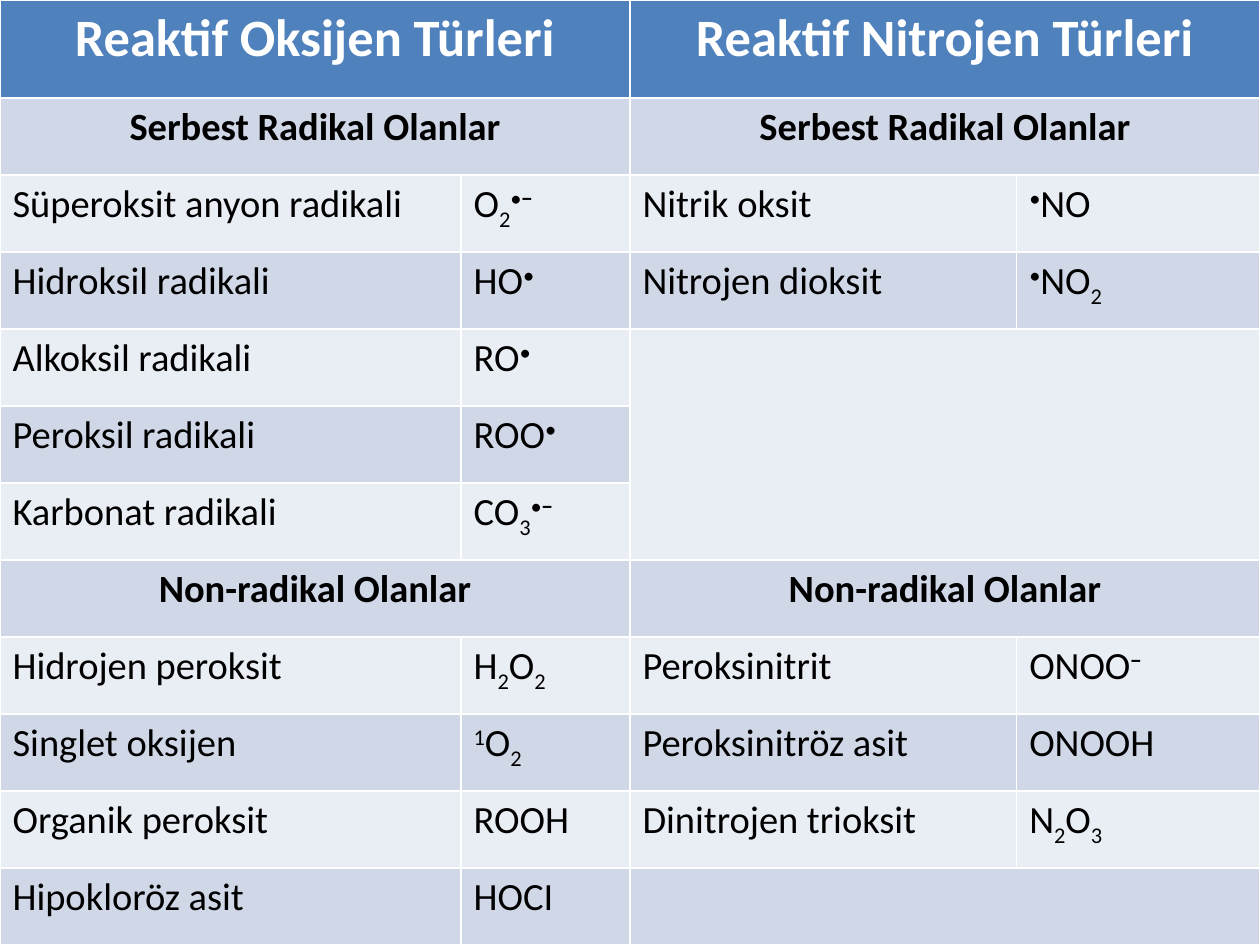
from pptx import Presentation
from pptx import util as u
from pptx.dml import color
from pptx.enum import text

FONT = "Calibri"
COLUMN_WIDTHS = [263.5, 96.5, 221, 139]
HEADER_HEIGHT, ROW_HEIGHT = 56, 44
HEADER_FILL, BANDS = "4F81BD", ("E9EDF4", "D0D8E8")
SHIFTS = {"_": -25000, "^": 30000}

TITLES = ("Reaktif Oksijen Türleri", "Reaktif Nitrojen Türleri")
SECTIONS = [
    ("Serbest Radikal Olanlar",
     [("Süperoksit anyon radikali", ["O", "_2", "^•", "^−"]),
      ("Hidroksil radikali", ["HO", "^•"]),
      ("Alkoksil radikali", ["RO", "^•"]),
      ("Peroksil radikali", ["ROO", "^•"]),
      ("Karbonat radikali", ["CO", "_3", "^•", "^−"])],
     [("Nitrik oksit", ["^•", "NO"]),
      ("Nitrojen dioksit", ["^•", "NO", "_2"])]),
    ("Non-radikal Olanlar",
     [("Hidrojen peroksit", ["H", "_2", "O", "_2"]),
      ("Singlet oksijen", ["^1", "O", "_2"]),
      ("Organik peroksit", ["ROOH"]),
      ("Hipokloröz asit", ["HOCI"])],
     [("Peroksinitrit", ["ONOO", "^−"]),
      ("Peroksinitröz asit", ["ONOOH"]),
      ("Dinitrojen trioksit", ["N", "_2", "O", "_3"])]),
]


def rgb(hex_color):
    return color.RGBColor.from_string(hex_color)


def write(cell, parts, size=22, ink="000000", bold=False, centred=False):
    paragraph = cell.text_frame.paragraphs[0]
    if centred:
        paragraph.alignment = text.PP_ALIGN.CENTER
    for part in parts:
        shift = SHIFTS.get(part[0])
        run = paragraph.add_run()
        run.text = part[1:] if shift else part
        run.font.name = FONT
        run.font.size = u.Pt(size)
        run.font.bold = bold or part == "^−"
        run.font.color.rgb = rgb(ink)
        if shift:
            run.font._element.set("baseline", str(shift))


def write_heading(table, row, column, heading, **style):
    cell = table.cell(row, column)
    cell.merge(table.cell(row, column + 1))
    write(cell, [heading], bold=True, centred=True, **style)


def main():
    prs = Presentation()
    prs.slide_width, prs.slide_height = u.Pt(720), u.Pt(540)
    slide = prs.slides.add_slide(prs.slide_layouts[6])

    row_count = 1 + sum(1 + len(oxygen) for _, oxygen, _ in SECTIONS)
    table = slide.shapes.add_table(row_count, len(COLUMN_WIDTHS), 0, 0,
                                   prs.slide_width, prs.slide_height).table
    for column, width in zip(table.columns, COLUMN_WIDTHS):
        column.width = u.Pt(width)
    for index, row in enumerate(table.rows):
        row.height = u.Pt(ROW_HEIGHT if index else HEADER_HEIGHT)
        for cell in row.cells:
            cell.fill.solid()
            cell.fill.fore_color.rgb = rgb(BANDS[index % 2] if index else HEADER_FILL)

    for side, title in enumerate(TITLES):
        write_heading(table, 0, side * 2, title, size=30, ink="FFFFFF")

    top = 1
    for heading, *species in SECTIONS:
        bottom = top + max(map(len, species))
        for side, entries in enumerate(species):
            left = side * 2
            write_heading(table, top, left, heading)
            for row, (name, formula) in enumerate(entries, top + 1):
                write(table.cell(row, left), [name])
                write(table.cell(row, left + 1), formula)
            first_free = top + 1 + len(entries)
            if first_free <= bottom:
                table.cell(first_free, left).merge(table.cell(bottom, left + 1))
        top = bottom + 1

    for index in range(1, row_count):
        for cell in table.rows[index].cells:
            cell.fill.fore_color.rgb = rgb(BANDS[index % 2])
    prs.save("out.pptx")


if __name__ == "__main__":
    main()
